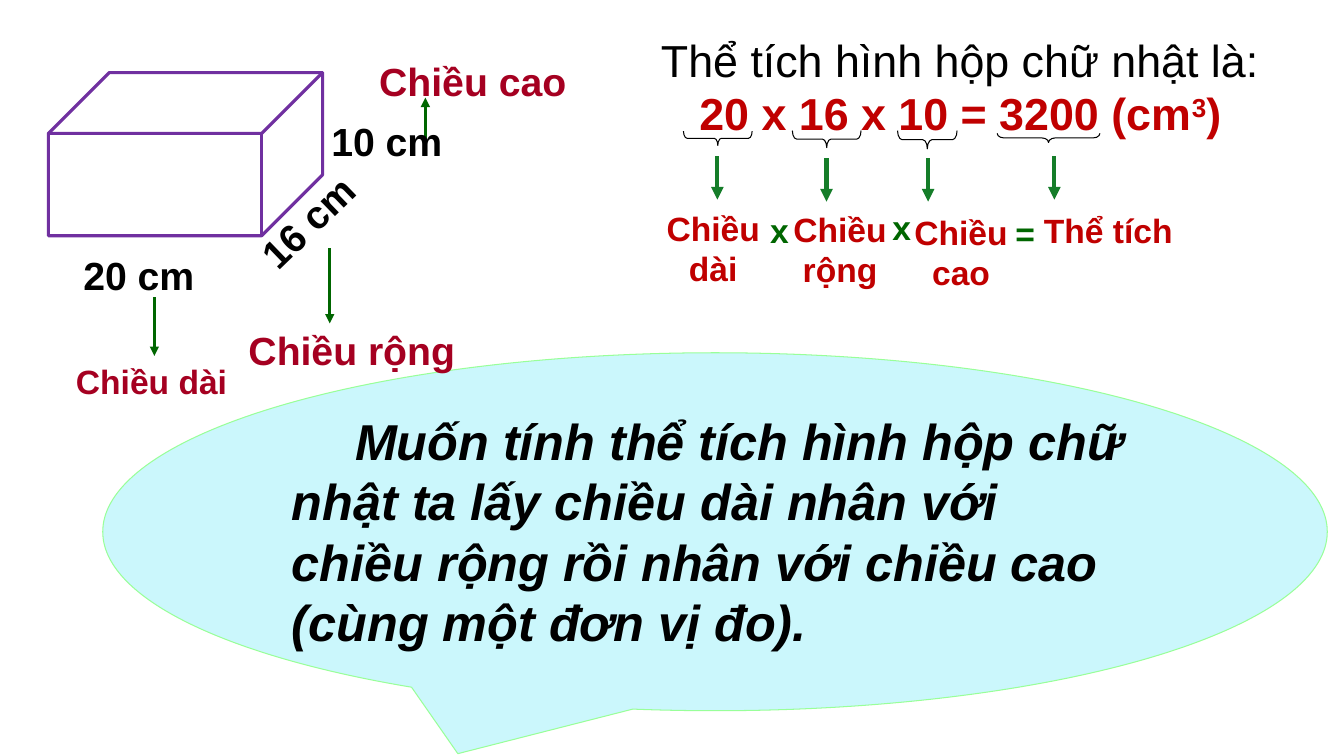
from lxml import etree
from pptx import Presentation
from pptx.dml.color import RGBColor
from pptx.enum.shapes import MSO_CONNECTOR, MSO_SHAPE
from pptx.enum.text import MSO_ANCHOR, PP_ALIGN
from pptx.oxml.ns import qn
from pptx.util import Cm, Pt

STRAIGHT = MSO_CONNECTOR.STRAIGHT
BRACE, CUBE, CALLOUT = MSO_SHAPE.LEFT_BRACE, MSO_SHAPE.CUBE, MSO_SHAPE.OVAL_CALLOUT
LEFT, CENTER = PP_ALIGN.LEFT, PP_ALIGN.CENTER
TOP = MSO_ANCHOR.TOP

BLACK = RGBColor(0x00, 0x00, 0x00)
RED = RGBColor(0xC0, 0x00, 0x00)
CRIMSON = RGBColor(0xA5, 0x00, 0x21)
DARK_GREEN = RGBColor(0x00, 0x66, 0x00)
GREEN = RGBColor(0x15, 0x7D, 0x29)
PURPLE = RGBColor(0x70, 0x30, 0xA0)
PALE_CYAN = RGBColor(0xCB, 0xF7, 0xFC)
PALE_GREEN = RGBColor(0x99, 0xFF, 0x99)


def format_runs(para, size, color, bold=True, italic=False):
    for span in para.runs:
        span.font.name = "Arial"
        span.font.size = Pt(size)
        span.font.color.rgb = color
        span.font.bold = bold
        span.font.italic = italic


def add_preset(preset, left, top, width, height, line_color, line_width):
    """Add an unfilled, shadowless preset shape measured in centimetres."""
    shape = page.shapes.add_shape(preset, Cm(left), Cm(top), Cm(width), Cm(height))
    shape.shadow.inherit = False
    shape.fill.background()
    shape.line.color.rgb = line_color
    shape.line.width = Pt(line_width)
    return shape


deck = Presentation()
deck.slide_width, deck.slide_height = Cm(33.87), Cm(19.05)
page = deck.slides.add_slide(deck.slide_layouts[6])

# Rule in the speech bubble
bubble = add_preset(CALLOUT, 2.59, 8.89, 30.86, 9.02, PALE_GREEN, 0.75)
bubble.adjustments[0], bubble.adjustments[1] = -0.21, 0.62
bubble.fill.solid()
bubble.fill.fore_color.rgb = PALE_CYAN
bubble.text_frame.word_wrap = True
bubble.text_frame.vertical_anchor = TOP
bubble.text_frame.text = (
    "Muốn tính thể tích hình hộp chữ nhật ta lấy chiều dài nhân với "
    "chiều rộng rồi nhân với chiều cao (cùng một đơn vị đo)."
)
rule = bubble.text_frame.paragraphs[0]
rule.alignment = LEFT
rule._p.get_or_add_pPr().set("indent", str(Cm(1.59)))
format_runs(rule, 36, BLACK, italic=True)

# Box with its dimensions
cube = add_preset(CUBE, 1.22, 1.83, 6.91, 4.11, PURPLE, 2.25)
cube.adjustments[0] = 0.373

# Braces under the terms of the formula
for left, top, width, height, curl in (
    (17.91, 2.62, 0.36, 1.73, 0.25),
    (20.62, 2.64, 0.43, 1.73, 0.25),
    (23.14, 2.77, 0.46, 1.5, 0.25),
    (26.31, 2.18, 0.23, 2.59, 0.75),
):
    brace = add_preset(BRACE, left, top, width, height, BLACK, 0.75)
    brace.rotation = 270
    brace.adjustments[0] = curl

# Vertical arrows: x, start, end
for x, start, end, color, width in (
    (18.08, 3.94, 5.03, GREEN, 3),
    (20.83, 3.99, 5.08, GREEN, 3),
    (23.39, 3.99, 5.08, GREEN, 3),
    (26.57, 3.94, 5.03, GREEN, 3),
    (3.89, 7.49, 8.97, DARK_GREEN, 2.25),
    (8.31, 6.25, 8.15, DARK_GREEN, 2.25),
    (10.72, 3.94, 2.46, DARK_GREEN, 2.25),
):
    arrow = page.shapes.add_connector(STRAIGHT, Cm(x), Cm(start), Cm(x), Cm(end))
    arrow.line.color.rgb = color
    arrow.line.width = Pt(width)
    etree.SubElement(arrow.line._get_or_add_ln(), qn("a:tailEnd"), type="triangle")
    etree.SubElement(arrow._element.spPr, qn("a:effectLst"))

# Labels: text, left, top, width, height, size, colour, alignment, wrap, rotation
for text, left, top, width, height, size, color, alignment, wrap, rotation in (
    ("Chiều dài", 16.36, 5.11, 3.23, 2.31, 24, RED, CENTER, True, 0),
    ("Chiều rộng", 19.53, 5.13, 3.28, 2.31, 24, RED, CENTER, True, 0),
    ("Chiều cao", 22.63, 5.21, 3.18, 2.31, 24, RED, CENTER, True, 0),
    ("Thể tích", 25.35, 5.16, 5.16, 1.32, 24, RED, CENTER, True, 0),
    ("x", 19.05, 5.16, 1.19, 1.32, 24, DARK_GREEN, CENTER, True, 0),
    ("x", 22.05, 5.08, 1.35, 1.32, 24, DARK_GREEN, CENTER, True, 0),
    ("=", 25.15, 5.23, 1.37, 1.32, 24, DARK_GREEN, CENTER, True, 0),
    ("Chiều dài", 1.65, 8.97, 4.34, 1.27, 24, CRIMSON, CENTER, False, 0),
    ("Chiều cao", 9.02, 1.32, 5.79, 1.45, 28, CRIMSON, CENTER, True, 0),
    ("Chiều rộng", 5.97, 8.1, 5.79, 1.45, 28, CRIMSON, CENTER, False, 0),
    ("10 cm", 8.1, 2.82, 4.37, 1.45, 28, BLACK, LEFT, True, 0),
    ("16 cm", 6.1, 4.85, 3.35, 1.45, 28, BLACK, LEFT, False, 316),
    ("20 cm", 1.85, 6.22, 3.71, 1.45, 28, BLACK, LEFT, True, 0),
):
    label = page.shapes.add_textbox(Cm(left), Cm(top), Cm(width), Cm(height))
    label.rotation = rotation
    label.text_frame.word_wrap = wrap
    label.text_frame.text = text
    para = label.text_frame.paragraphs[0]
    para.alignment = alignment
    format_runs(para, size, color)

# Volume formula
formula = page.shapes.add_textbox(Cm(15.54), Cm(0.69), Cm(17.32), Cm(2.97))
formula.text_frame.word_wrap = True
formula.text_frame.text = "Thể tích hình hộp chữ nhật là:"
heading = formula.text_frame.paragraphs[0]
heading.alignment = CENTER
format_runs(heading, 32, BLACK, bold=False)
product = formula.text_frame.add_paragraph()
product.alignment = CENTER
for part in ("20 x 16 x 10 = 3200 (cm", "3", ")"):
    product.add_run().text = part
format_runs(product, 32, RED)
product.runs[1].font._element.set("baseline", "30000")

deck.save("out.pptx")
